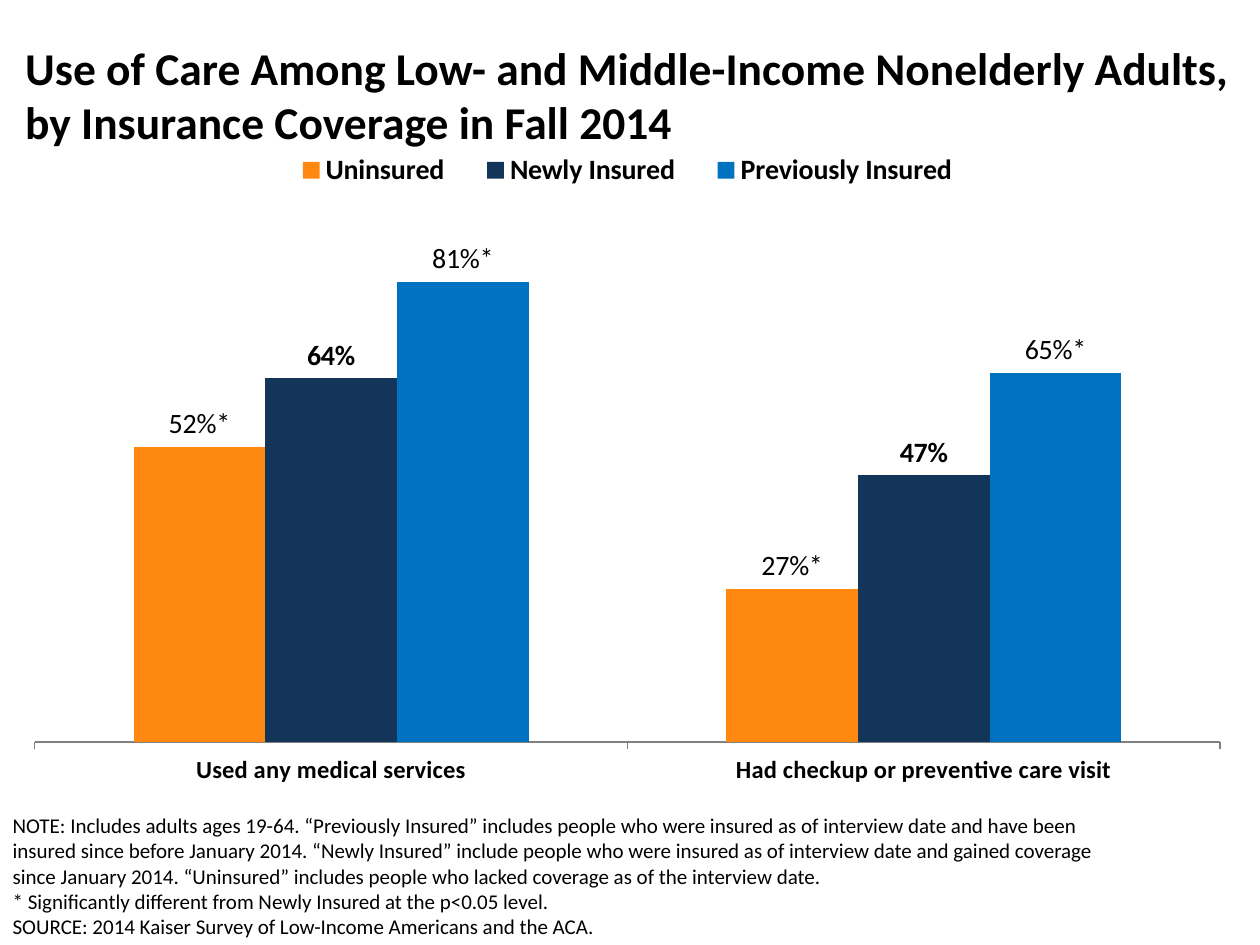
from dataclasses import dataclass

from lxml import etree
from pptx import Presentation
from pptx.chart.data import CategoryChartData
from pptx.dml.color import RGBColor
from pptx.enum.chart import XL_CHART_TYPE, XL_LABEL_POSITION, XL_LEGEND_POSITION, XL_TICK_MARK
from pptx.enum.text import MSO_ANCHOR, MSO_AUTO_SIZE, PP_ALIGN
from pptx.oxml import parse_xml
from pptx.oxml.ns import nsdecls, qn
from pptx.util import Pt

EMU_PER_PX = 9144
FONT = "Calibri"
BLACK = RGBColor(0x00, 0x00, 0x00)
GRAY = RGBColor(0x80, 0x80, 0x80)
ORANGE = RGBColor(0xFF, 0x88, 0x11)
NAVY = RGBColor(0x13, 0x35, 0x59)
BLUE = RGBColor(0x00, 0x72, 0xC0)

COLUMN_CLUSTERED = XL_CHART_TYPE.COLUMN_CLUSTERED
OUTSIDE_END = XL_LABEL_POSITION.OUTSIDE_END
LEGEND_TOP = XL_LEGEND_POSITION.TOP
TICK_OUTSIDE = XL_TICK_MARK.OUTSIDE
TICK_NONE = XL_TICK_MARK.NONE
ANCHOR_MIDDLE = MSO_ANCHOR.MIDDLE
ANCHOR_BOTTOM = MSO_ANCHOR.BOTTOM
NO_AUTOFIT = MSO_AUTO_SIZE.NONE
ALIGN_LEFT = PP_ALIGN.LEFT


@dataclass(frozen=True)
class Box:
    left: int
    top: int
    width: int
    height: int

    def emu(self) -> tuple[int, ...]:
        return tuple(px * EMU_PER_PX for px in (self.left, self.top, self.width, self.height))


@dataclass(frozen=True)
class CoverageGroup:
    name: str
    color: RGBColor
    values: tuple[float, ...]
    differs: bool


CATEGORIES = ("Used any medical services", "Had checkup or preventive care visit")
GROUPS = (
    CoverageGroup("Uninsured", ORANGE, (0.52, 0.27), True),
    CoverageGroup("Newly Insured", NAVY, (0.64, 0.47), False),
    CoverageGroup("Previously Insured", BLUE, (0.81, 0.65), True),
)
TITLE = "Use of Care Among Low- and Middle-Income Nonelderly Adults, by Insurance Coverage in Fall 2014"
NOTES = (
    "NOTE: Includes adults ages 19-64. “Previously Insured” includes people who were insured as of "
    "interview date and have been insured since before January 2014. “Newly Insured” include people "
    "who were insured as of interview date and gained coverage since January 2014. “Uninsured” "
    "includes people who lacked coverage as of the interview date.",
    "* Significantly different from Newly Insured at the p<0.05 level.",
    "SOURCE: 2014 Kaiser Survey of Low-Income Americans and the ACA.",
)


def style_font(font, size: int, bold: bool = False) -> None:
    font.name = FONT
    font.size = Pt(size)
    font.bold = bold
    font.color.rgb = BLACK


def fill_placeholder(shape, box: Box, texts: tuple[str, ...], size: int, bold: bool, anchor) -> None:
    shape.left, shape.top, shape.width, shape.height = box.emu()
    frame = shape.text_frame
    frame.word_wrap = True
    frame.auto_size = NO_AUTOFIT
    frame.vertical_anchor = anchor
    frame.text = "\n".join(texts)
    for paragraph in frame.paragraphs:
        properties = paragraph._p.get_or_add_pPr()
        properties.set("marL", "0")
        properties.set("indent", "0")
        etree.SubElement(properties, qn("a:buNone"))
        paragraph.alignment = ALIGN_LEFT
        paragraph.space_before = Pt(0)
        style_font(paragraph.font, size, bold)


def manual_layout(left: float, top: float, width: float, height: float, inner: bool = False):
    target = '<c:layoutTarget val="inner"/>' if inner else ""
    return parse_xml(
        f'<c:layout {nsdecls("c")}><c:manualLayout>{target}'
        '<c:xMode val="edge"/><c:yMode val="edge"/>'
        f'<c:x val="{left}"/><c:y val="{top}"/><c:w val="{width}"/><c:h val="{height}"/>'
        "</c:manualLayout></c:layout>"
    )


def style_series(series, group: CoverageGroup) -> None:
    series.format.fill.solid()
    series.format.fill.fore_color.rgb = group.color
    series.invert_if_negative = False
    labels = series.data_labels
    labels.show_value = True
    labels.number_format = "0%"
    labels.number_format_is_linked = False
    labels.position = OUTSIDE_END
    style_font(labels.font, 16, True)
    if group.differs:
        for index, value in enumerate(group.values):
            label = series.points[index].data_label
            paragraph = label.text_frame.paragraphs[0]
            run = paragraph.add_run()
            run.text = f"{value:.0%}*"
            style_font(run.font, 16)
            label.position = OUTSIDE_END


def add_coverage_chart(slide, box: Box) -> None:
    data = CategoryChartData(number_format="0%")
    data.categories = CATEGORIES
    for group in GROUPS:
        data.add_series(group.name, group.values)
    chart = slide.shapes.add_chart(COLUMN_CLUSTERED, *box.emu(), data).chart
    style_font(chart.font, 18)
    chart.has_title = False

    chart.has_legend = True
    legend = chart.legend
    legend.position = LEGEND_TOP
    legend.include_in_layout = False
    style_font(legend.font, 16, True)
    legend._element.find(qn("c:legendPos")).addnext(manual_layout(0.21, 0.06, 0.58, 0.07))

    plot = chart.plots[0]
    plot.gap_width = 150
    plot.overlap = 0
    plot.vary_by_categories = False
    for series, group in zip(plot.series, GROUPS):
        style_series(series, group)

    category_axis = chart.category_axis
    category_axis.major_tick_mark = TICK_OUTSIDE
    category_axis.minor_tick_mark = TICK_NONE
    category_axis.format.line.color.rgb = GRAY
    category_axis.format.line.width = Pt(0.75)
    style_font(category_axis.tick_labels.font, 14, True)

    value_axis = chart.value_axis
    value_axis.minimum_scale = 0
    value_axis.maximum_scale = 1
    value_axis.has_major_gridlines = False
    value_axis.visible = False

    plot_area = chart._chartSpace.chart.plotArea
    for layout in plot_area.findall(qn("c:layout")):
        plot_area.remove(layout)
    plot_area.insert(0, manual_layout(0.02, 0.1, 0.96, 0.82, inner=True))


def main() -> None:
    presentation = Presentation()
    presentation.slide_width = 1000 * EMU_PER_PX
    presentation.slide_height = 750 * EMU_PER_PX
    slide = presentation.slides.add_slide(presentation.slide_layouts[1])
    add_coverage_chart(slide, Box(8, 83, 980, 550))
    fill_placeholder(slide.placeholders[1], Box(0, 690, 910, 60), NOTES, 12, False, ANCHOR_BOTTOM)
    fill_placeholder(slide.shapes.title, Box(10, 25, 980, 100), (TITLE,), 26, True, ANCHOR_MIDDLE)
    presentation.save("out.pptx")


if __name__ == "__main__":
    main()
